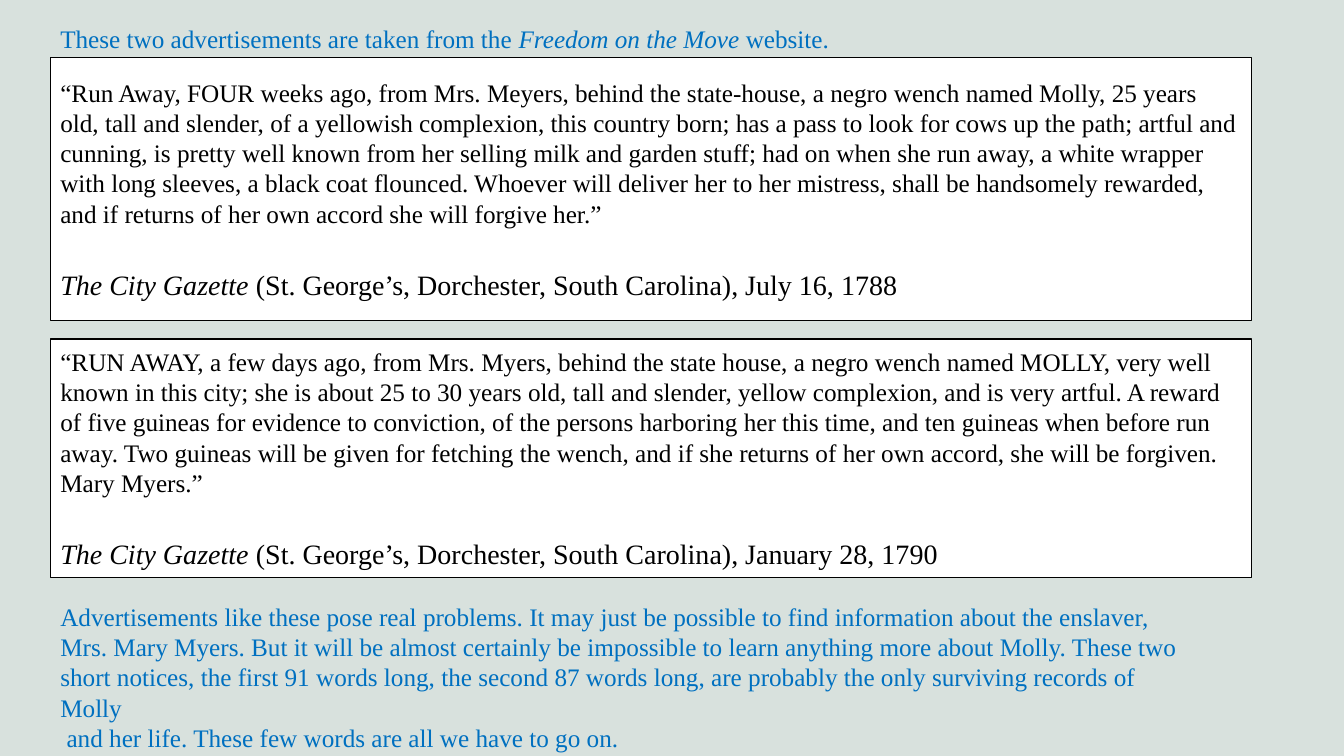
from dataclasses import dataclass

from pptx import Presentation, util as u
from pptx.dml.color import RGBColor
from pptx.enum import shapes, text

PX = 9525  # EMU per px
FONT = "Times New Roman"
COLORS = {"background": "D8E1DD", "paper": "FFFFFF", "ink": "000000", "note": "0070C0"}


@dataclass(frozen=True)
class Box:
    left: int
    top: int
    width: int
    height: int


@dataclass(frozen=True)
class Run:
    text: str
    size: int = 18
    italic: bool = False


@dataclass(frozen=True)
class Advertisement:
    box: Box
    quote: str
    date: str


@dataclass(frozen=True)
class Note:
    box: Box
    paragraphs: list[list[Run]]


ADVERTISEMENTS = [
    Advertisement(
        Box(48, 55, 1144, 250),
        "“Run Away, FOUR weeks ago, from Mrs. Meyers, behind the state-house, a negro wench "
        "named Molly, 25 years old, tall and slender, of a yellowish complexion, this country "
        "born; has a pass to look for cows up the path; artful and cunning, is pretty well known "
        "from her selling milk and garden stuff; had on when she run away, a white wrapper with "
        "long sleeves, a black coat flounced. Whoever will deliver her to her mistress, shall be "
        "handsomely rewarded, and if returns of her own accord she will forgive her.”",
        "July 16, 1788",
    ),
    Advertisement(
        Box(48, 323, 1144, 227),
        "“RUN AWAY, a few days ago, from Mrs. Myers, behind the state house, a negro wench named "
        "MOLLY, very well known in this city; she is about 25 to 30 years old, tall and slender, "
        "yellow complexion, and is very artful. A reward of five guineas for evidence to "
        "conviction, of the persons harboring her this time, and ten guineas when before run "
        "away. Two guineas will be given for fetching the wench, and if she returns of her own "
        "accord, she will be forgiven. Mary Myers.”",
        "January 28, 1790",
    ),
]

NOTES = [
    Note(
        Box(48, 17, 754, 38),
        [[
            Run("These two advertisements are taken from the "),
            Run("Freedom on the Move", italic=True),
            Run(" website."),
        ]],
    ),
    Note(
        Box(48, 568, 1091, 156),
        [
            [Run("Advertisements like these pose real problems. It may just be possible to find "
                 "information about the enslaver,")],
            [Run("Mrs. Mary Myers. But it will be almost certainly be impossible to learn "
                 "anything more about Molly. These two")],
            [Run("short notices, the first 91 words long, the second 87 words long, are probably "
                 "the only surviving records of Molly")],
            [Run(" and her life. These few words are all we have to go on.")],
        ],
    ),
]


def color(name: str) -> RGBColor:
    return RGBColor.from_string(COLORS[name])


def emu(box: Box) -> list[int]:
    return [length * PX for length in (box.left, box.top, box.width, box.height)]


def write(frame, paragraphs: list[list[Run]], color_name: str) -> None:
    frame.word_wrap = True
    for index, runs in enumerate(paragraphs):
        paragraph = frame.add_paragraph() if index else frame.paragraphs[0]
        paragraph.alignment = text.PP_ALIGN.LEFT
        for item in runs:
            run = paragraph.add_run()
            run.text = item.text
            run.font.name = FONT
            run.font.size = u.Pt(item.size)
            run.font.italic = item.italic
            run.font.color.rgb = color(color_name)


def add_advertisement(slide, advertisement: Advertisement) -> None:
    shape = slide.shapes.add_shape(shapes.MSO_SHAPE.RECTANGLE, *emu(advertisement.box))
    shape.shadow.inherit = False
    shape.fill.solid()
    shape.fill.fore_color.rgb = color("paper")
    shape.line.color.rgb = color("ink")
    shape.line.width = u.Pt(1)
    frame = shape.text_frame
    frame.vertical_anchor = text.MSO_ANCHOR.MIDDLE
    source = [
        Run("The City Gazette ", 20, italic=True),
        Run(f"(St. George’s, Dorchester, South Carolina), {advertisement.date}", 20),
    ]
    write(frame, [[Run(advertisement.quote)], source], "ink")
    frame.paragraphs[1].space_before = u.Pt(28)


def add_note(slide, note: Note) -> None:
    shape = slide.shapes.add_textbox(*emu(note.box))
    write(shape.text_frame, note.paragraphs, "note")


def main() -> None:
    presentation = Presentation()
    presentation.slide_width = 1280 * PX
    presentation.slide_height = 720 * PX
    slide = presentation.slides.add_slide(presentation.slide_layouts[6])
    slide.background.fill.solid()
    slide.background.fill.fore_color.rgb = color("background")
    for advertisement in ADVERTISEMENTS:
        add_advertisement(slide, advertisement)
    for note in NOTES:
        add_note(slide, note)
    presentation.save("out.pptx")


if __name__ == "__main__":
    main()
